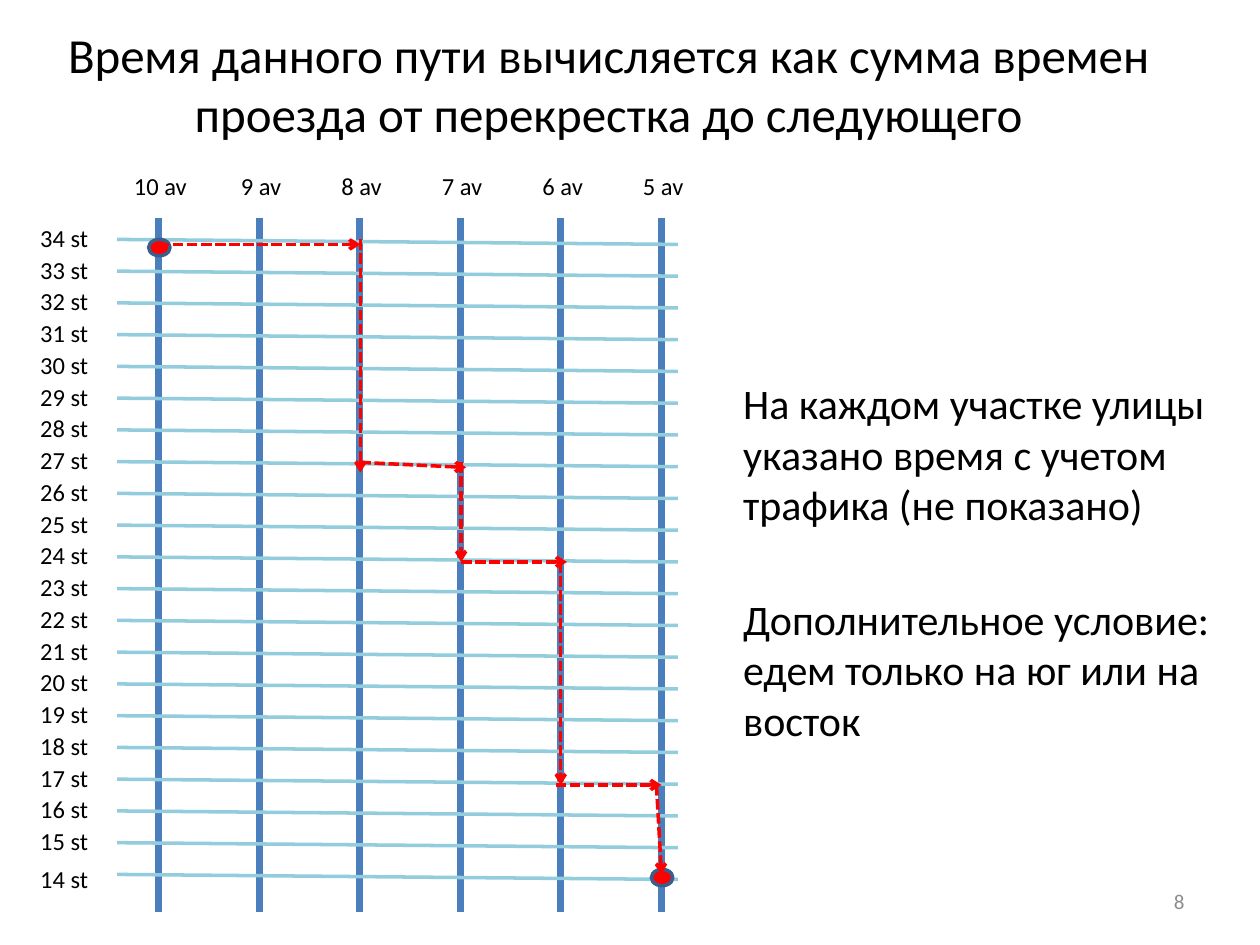
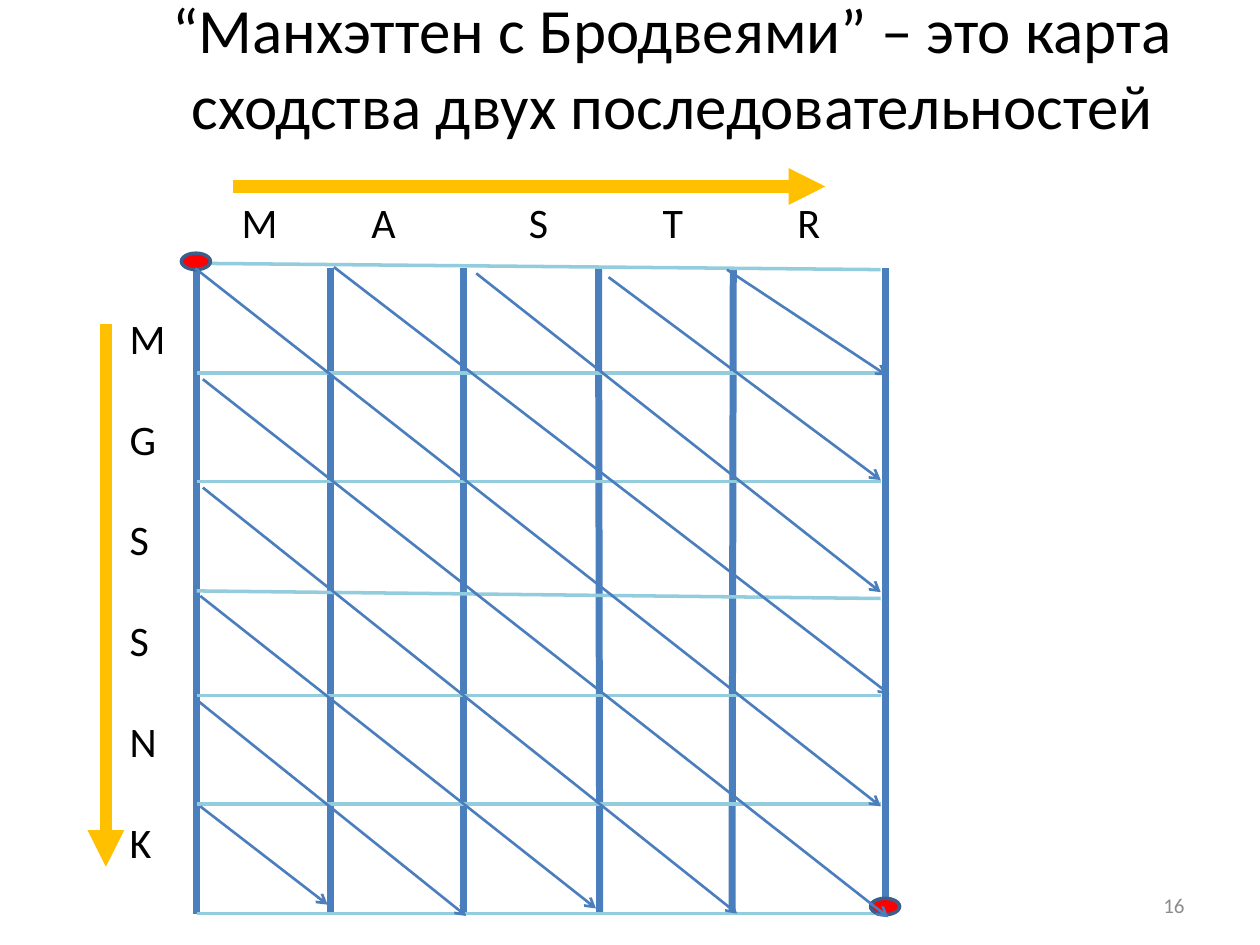
from lxml import etree
from pptx import Presentation
from pptx.dml.color import RGBColor
from pptx.enum.dml import MSO_LINE
from pptx.enum.shapes import MSO_CONNECTOR, MSO_SHAPE
from pptx.enum.text import MSO_ANCHOR, PP_ALIGN
from pptx.oxml.ns import qn
from pptx.util import Inches, Pt

STRAIGHT, OVAL = MSO_CONNECTOR.STRAIGHT, MSO_SHAPE.OVAL
DASH = MSO_LINE.SQUARE_DOT
MIDDLE = MSO_ANCHOR.MIDDLE
LEFT, CENTER, RIGHT = PP_ALIGN.LEFT, PP_ALIGN.CENTER, PP_ALIGN.RIGHT

FONT = "Calibri"
COLORS = {"ink": "000000", "gray": "8C8C8C", "road": "4B7EBC", "street": "93CDDD",
          "red": "FF0000", "rim": "3A5F8C", "gold": "FFC000"}

# name: color, width, dash, arrowhead
LINES = {
    "road": ("road", 4, None, None),
    "street": ("street", 2, None, None),
    "path": ("red", 2, DASH, "arrow"),
    "slant": ("road", 1.5, None, "arrow"),
    "guide": ("gold", 7, None, "triangle"),
}

# Slide with the street map
ROUTE = {
    "title": "Время данного пути вычисляется как сумма времен "
             "проезда от перекрестка до следующего",
    "notes": [
        (2.95, "На каждом участке улицы указано время с учетом трафика (не показано)"),
        (4.66, "Дополнительное условие: едем только на юг или на восток"),
    ],
    "page": "8",
    "avenues": [f"{num} av" for num in range(10, 4, -1)],
    "streets": [f"{num} st" for num in range(34, 13, -1)],
    "path": [
        (1.26, 1.94, 2.86, 1.94), (2.86, 1.9, 2.86, 3.75),
        (2.86, 3.67, 3.7, 3.71), (3.66, 3.67, 3.66, 4.46),
        (3.66, 4.46, 4.5, 4.46), (4.45, 4.46, 4.45, 6.23),
        (4.41, 6.23, 5.25, 6.23), (5.21, 6.23, 5.25, 6.94),
    ],
    "dots": [(1.18, 1.9), (5.17, 6.9)],
}

# Slide with the sequence grid
MATCH = {
    "title": "“Манхэттен с Бродвеями” – это карта сходства двух последовательностей",
    "page": "16",
    "across": "MASTR",
    "tabs": [1.03, 2.28, 3.34, 4.41],
    "down": "MGSSNK",
    "roads": [(1.56, 1.56, 7.25), (2.62, 2.62, 7.25), (3.68, 3.68, 7.25),
              (4.75, 4.76, 7.25), (5.82, 5.81, 7.25), (7.03, 7.03, 7.13)],
    "rows": [(2.09, 2.14), (2.96, 2.96), (3.82, 3.82), (4.69, 4.75),
             (5.52, 5.52), (6.38, 6.38), (7.25, 7.25)],
    "slants": [
        (5.77, 2.14, 7.04, 2.98), (4.83, 2.2, 6.99, 3.81),
        (3.78, 2.17, 6.99, 4.7), (2.65, 2.12, 7.06, 5.51),
        (1.55, 2.13, 6.99, 6.4), (1.61, 3.01, 7.05, 7.28),
        (1.61, 3.87, 5.85, 7.25), (1.59, 4.73, 4.73, 7.21),
        (1.58, 5.57, 3.7, 7.27), (1.59, 6.4, 2.6, 7.18),
    ],
    "guides": [(0.84, 2.57, 0.84, 6.88), (1.85, 1.48, 6.55, 1.48)],
    "dots": [(1.44, 2.01), (6.91, 7.13)],
}


def tint(hue):
    """Return a named color."""
    return RGBColor.from_string(COLORS[hue])


def apply(item, values):
    """Set each attribute of item from a dict."""
    for key, value in values.items():
        setattr(item, key, value)


def fill(shape, paras, size, hue="ink", align=LEFT, gap=0, **frame):
    """Write formatted paragraphs into a shape."""
    body = shape.text_frame
    apply(body, {"word_wrap": True, **frame})
    body.text = "\n".join(paras)
    for para in body.paragraphs:
        apply(para, {"alignment": align, "space_after": Pt(gap)})
        for run in para.runs:
            apply(run.font, {"name": FONT, "size": Pt(size)})
            run.font.color.rgb = tint(hue)


def label(slide, box, paras, size, **style):
    """Add a text box at box, given in inches."""
    shape = slide.shapes.add_textbox(*map(Inches, box))
    fill(shape, paras, size, **style)
    return shape


def line(slide, ends, kind):
    """Draw a straight line in one of the shared styles."""
    hue, width, dash, head = LINES[kind]
    link = slide.shapes.add_connector(STRAIGHT, *map(Inches, ends))
    link.line.color.rgb = tint(hue)
    apply(link.line, {"width": Pt(width), "dash_style": dash})
    if head:
        etree.SubElement(link.line._get_or_add_ln(), qn("a:tailEnd"), type=head)
    etree.SubElement(link._element.spPr, qn("a:effectLst"))


def dots(slide, spots, width):
    """Mark the start and the end of the way."""
    for left, top in spots:
        dot = slide.shapes.add_shape(OVAL, *map(Inches, (left, top, width, 0.13)))
        dot.shadow.inherit = False
        dot.fill.solid()
        dot.fill.fore_color.rgb = tint("red")
        dot.line.color.rgb = tint("rim")
        dot.line.width = Pt(2)


def start(deck, data, box, size, foot):
    """Add a slide with its title and page number."""
    slide = deck.slides.add_slide(deck.slide_layouts[5])
    head = slide.shapes.title
    apply(head, dict(zip(("left", "top", "width", "height"), map(Inches, box))))
    fill(head, [data["title"]], size, align=CENTER, vertical_anchor=MIDDLE)
    label(slide, (7.17, foot, 2.33, 0.4), [data["page"]], 12, hue="gray",
          align=RIGHT, vertical_anchor=MIDDLE)
    return slide


def route(deck):
    """Build the street map with one path."""
    slide = start(deck, ROUTE, (0, 0.14, 9.66, 1.04), 28, 6.95)
    for col, name in enumerate(ROUTE["avenues"]):
        mid = 1.26 + 0.798 * col
        wide = 0.63 if len(name) > 4 else 0.53
        line(slide, (mid, 1.73, mid, 7.24), "road")
        label(slide, (mid + 0.02 - wide / 2, 1.31, wide, 0.34), [name], 14,
              word_wrap=False)
    final = len(ROUTE["streets"]) - 1
    for row, name in enumerate(ROUTE["streets"]):
        top = 1.9 + 0.252 * row
        line(slide, (0.93, top, 5.38, top + 0.04), "street")
        drop = 0.13 if row == final else 0.18
        label(slide, (0.22, top - drop, 0.59, 0.34), [name], 14, word_wrap=False)
    dots(slide, ROUTE["dots"], 0.17)
    for ends in ROUTE["path"]:
        line(slide, ends, "path")
    for top, text in ROUTE["notes"]:
        label(slide, (5.8, top, 3.91, 1.31), [text], 24)


def match(deck):
    """Build the grid that compares two sequences."""
    slide = start(deck, MATCH, (1.17, -0.1, 8.33, 1.25), 36, 6.98)
    for head, foot, end in MATCH["roads"]:
        line(slide, (head, 2.13, foot, end), "road")
    for left, right in MATCH["rows"]:
        line(slide, (1.56, left, 6.99, right), "street")
    dots(slide, MATCH["dots"], 0.23)
    word = label(slide, (1.82, 1.51, 4.8, 0.5), ["\t".join(MATCH["across"])], 24)
    props = word.text_frame.paragraphs[0]._p.get_or_add_pPr()
    stops = etree.SubElement(props, qn("a:tabLst"))
    for stop in MATCH["tabs"]:
        etree.SubElement(stops, qn("a:tab"), pos=str(Inches(stop)), algn="l")
    label(slide, (0.93, 2.43, 0.52, 4.54), MATCH["down"], 24, gap=28.8)
    for kind in ("slant", "guide"):
        for ends in MATCH[kind + "s"]:
            line(slide, ends, kind)


def main():
    """Build and save the deck."""
    deck = Presentation()
    apply(deck, {"slide_width": Inches(10), "slide_height": Inches(7.5)})
    route(deck)
    match(deck)
    deck.save("out.pptx")


main()
